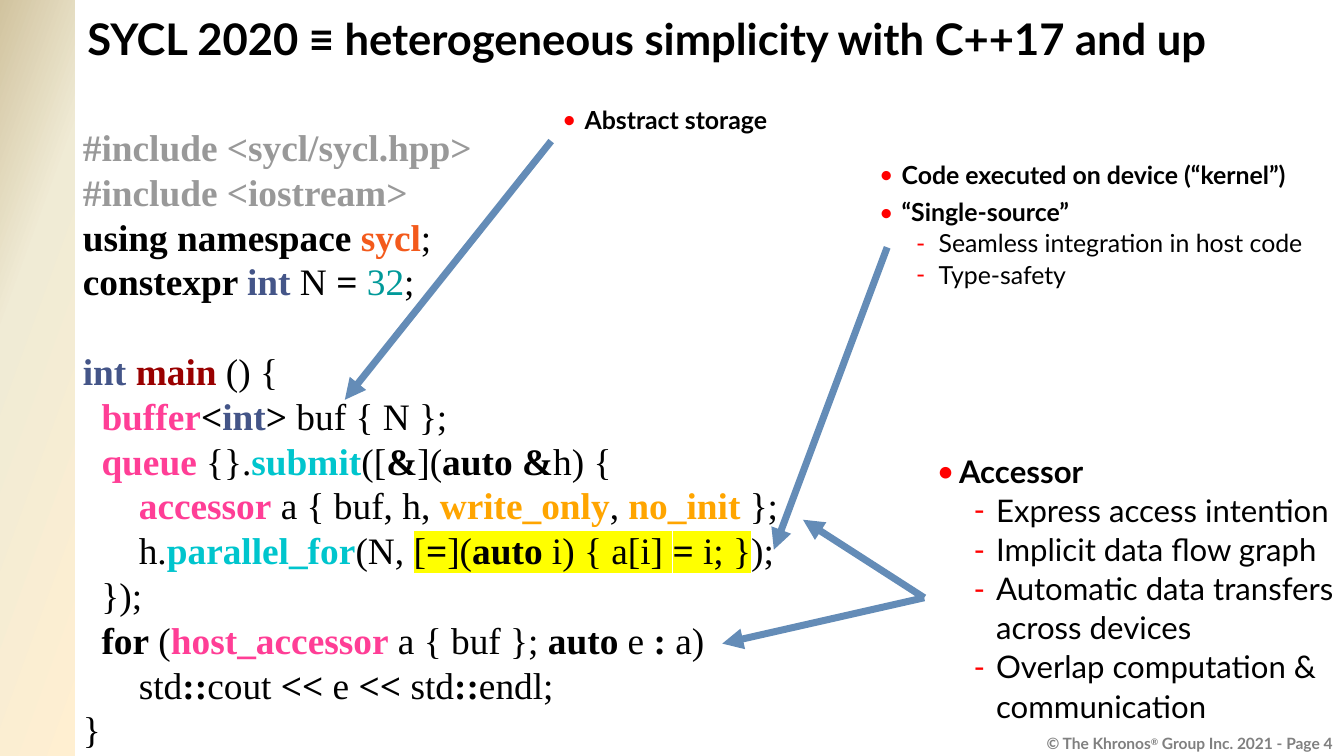
from copy import deepcopy

from lxml import etree
from pptx import Presentation
from pptx.dml.color import RGBColor
from pptx.enum import shapes, text
from pptx.oxml.ns import qn
from pptx.util import Cm, Pt

SANS, SERIF = "Lato", "Times New Roman"
BLACK, RED, GREY, ARROW = "000000", "FF0000", "808080", "648CB7"
BAND_STOPS = [(0, "FFEFD1"), (0.65, "F0EBD5"), (1, "D1C39F")]

# Code styles: colour, bold, highlighted
STYLES = {
    "plain": (BLACK, False, False),
    "bold": (BLACK, True, False),
    "include": ("999999", True, False),
    "space": ("F35A1C", True, False),
    "type": ("445588", True, False),
    "number": ("009999", False, False),
    "main": ("990000", True, False),
    "class": ("FF3E96", True, False),
    "method": ("00C5CD", True, False),
    "tag": ("FFA500", True, False),
    "mark": (BLACK, False, True),
    "boldmark": (BLACK, True, True),
}

# Each code line is a list of (style, text)
CODE = [
    [("include", "#include <sycl/sycl.hpp>")],
    [("include", "#include <iostream>")],
    [("bold", "using namespace "), ("space", "sycl"), ("plain", ";")],
    [("bold", "constexpr "), ("type", "int"), ("plain", " N "),
     ("bold", "= "), ("number", "32"), ("plain", ";")],
    [],
    [("type", "int "), ("main", "main"), ("plain", " () {")],
    [("plain", "  "), ("class", "buffer"), ("bold", "<"), ("type", "int"),
     ("bold", "> "), ("plain", "buf { N };")],
    [("plain", "  "), ("class", "queue"), ("plain", " {}."),
     ("method", "submit"), ("plain", "(["), ("bold", "&"), ("plain", "]("),
     ("bold", "auto &"), ("plain", "h) {")],
    [("plain", "      "), ("class", "accessor"), ("plain", " a { buf, h, "),
     ("tag", "write_only"), ("plain", ", "), ("tag", "no_init"),
     ("plain", " };")],
    [("plain", "      h."), ("method", "parallel_for"), ("plain", "(N, "),
     ("mark", "["), ("boldmark", "="), ("mark", "]("), ("boldmark", "auto"),
     ("mark", " i) { a[i] "), ("boldmark", "="), ("mark", " i; }"),
     ("plain", ");")],
    [("plain", "  });")],
    [("plain", "  "), ("bold", "for"), ("plain", " ("),
     ("class", "host_accessor"), ("plain", " a { buf }; "), ("bold", "auto"),
     ("plain", " e "), ("bold", ":"), ("plain", " a)")],
    [("plain", "      std"), ("bold", "::"), ("plain", "cout "),
     ("bold", "<<"), ("plain", " e "), ("bold", "<<"), ("plain", " std"),
     ("bold", "::"), ("plain", "endl;")],
    [("plain", "}")],
]


def colour(value):
    return RGBColor.from_string(value)


def add_span(para, words, size, font, ink=BLACK, bold=False):
    span = para.add_run()
    span.text = words
    span.font.name, span.font.size, span.font.bold = font, Pt(size), bold
    span.font.color.rgb = colour(ink)
    return span


def add_box(page, left, top, width, height, inset=(0.28, 0.13)):
    box = page.shapes.add_textbox(Cm(left), Cm(top), Cm(width), Cm(height))
    frame = box.text_frame
    frame.word_wrap = True
    frame.margin_left = frame.margin_right = Cm(inset[0])
    frame.margin_top = frame.margin_bottom = Cm(inset[1])
    return frame


def next_para(frame, index):
    return frame.add_paragraph() if index else frame.paragraphs[0]


def add_bullet(para, mark, indent):
    props = para._p.get_or_add_pPr()
    props.set("marL", str(Cm(indent)))
    props.set("indent", str(-Cm(0.51)))
    tint = etree.SubElement(props, qn("a:buClr"))
    etree.SubElement(tint, qn("a:srgbClr"), val=RED)
    etree.SubElement(props, qn("a:buFont"), typeface=SANS)
    etree.SubElement(props, qn("a:buChar"), char=mark)


def add_notes_list(page, place, size, items):
    """Items are (level, words); level 0 is bold with a dot, level 1 has a dash."""
    frame = add_box(page, *place)
    for index, (level, words) in enumerate(items):
        para = next_para(frame, index)
        para.level = level
        add_bullet(para, "•-"[level], (0.51, 1.35)[level])
        para.line_spacing = 1.05
        para.space_before = Pt(4 if index and level == 0 else 0)
        add_span(para, words, size, SANS, bold=level == 0)


def highlight(span):
    fill = span._r.rPr.find(qn("a:solidFill"))
    mark = etree.Element(qn("a:highlight"))
    etree.SubElement(mark, qn("a:srgbClr"), val="FFFF00")
    fill.addnext(mark)


def add_code(page, place):
    frame = add_box(page, *place)
    for index, line in enumerate(CODE):
        para = next_para(frame, index)
        para.line_spacing = 1.0
        for style, words in line:
            ink, bold, marked = STYLES[style]
            span = add_span(para, words, 24, SERIF, ink, bold)
            if marked:
                highlight(span)
        if not line:
            end = etree.SubElement(para._p, qn("a:endParaRPr"), sz="2400")
            etree.SubElement(end, qn("a:latin"), typeface=SERIF)


def add_arrow(page, start, end):
    arrow = page.shapes.add_connector(
        shapes.MSO_CONNECTOR.STRAIGHT, *map(Cm, start + end))
    arrow.line.color.rgb = colour(ARROW)
    arrow.line.width = Pt(4.5)
    etree.SubElement(arrow.line._get_or_add_ln(), qn("a:tailEnd"), type="triangle")
    etree.SubElement(arrow._element.spPr, qn("a:effectLst"))


def add_band(page, width, height):
    band = page.shapes.add_shape(
        shapes.MSO_SHAPE.RECTANGLE, 0, 0, Cm(width), Cm(height))
    band.shadow.inherit = False
    band.line.fill.background()
    band.fill.gradient()
    band.fill.gradient_angle = 160
    stops = band._element.spPr.find(qn("a:gradFill")).find(qn("a:gsLst"))
    stops.append(deepcopy(stops[-1]))
    for stop, (position, ink) in zip(band.fill.gradient_stops, BAND_STOPS):
        stop.position = position
        stop.color.rgb = colour(ink)


def add_footer(page):
    frame = add_box(page, 16.08, 16.61, 14.27, 0.53, inset=(0.13, 0.05))
    para = frame.paragraphs[0]
    para.alignment = text.PP_ALIGN.RIGHT
    for words in ("© The Khronos", "®", " Group Inc. 2021 - Page 4"):
        span = add_span(para, words, 10, SANS, GREY, True)
        if words == "®":
            span._r.rPr.set("baseline", "30000")


def add_title(page, words):
    frame = add_box(page, 1.7, 0, 28.78, 1.75)
    frame.vertical_anchor = text.MSO_ANCHOR.MIDDLE
    add_span(frame.paragraphs[0], words, 28, SANS, bold=True)


def main():
    deck = Presentation()
    deck.slide_width, deck.slide_height = Cm(30.48), Cm(17.15)
    page = deck.slides.add_slide(deck.slide_layouts[6])

    # Frame of the page
    add_footer(page)
    add_band(page, 1.7, 17.15)
    add_title(page, "SYCL 2020 ≡ heterogeneous simplicity with C++17 and up")

    # Code and the remarks around it
    add_notes_list(page, (20.96, 10.08, 11.23, 6.99), 20, [
        (0, "Accessor"),
        (1, "Express access intention"),
        (1, "Implicit data flow graph"),
        (1, "Automatic data transfers across devices"),
        (1, "Overlap computation & communication"),
    ])
    add_notes_list(page, (19.66, 3.45, 10.82, 4.88), 16, [
        (0, "Code executed on device (“kernel”)"),
        (0, "“Single-source”"),
        (1, "Seamless integration in host code"),
        (1, "Type-safety"),
    ])
    add_code(page, (1.6, 2.69, 18.52, 12.22))
    add_notes_list(page, (12.47, 2.21, 8.03, 1.27), 16, [(0, "Abstract storage")])

    # Arrows from remarks to code
    accessor = (20.96, 13.56)
    add_arrow(page, (12.5, 3.2), (7.82, 9.07))
    add_arrow(page, (20.12, 5.61), (17.55, 12.47))
    add_arrow(page, accessor, (16.38, 14.6))
    add_arrow(page, accessor, (18.21, 11.79))

    deck.save("out.pptx")


if __name__ == "__main__":
    main()
